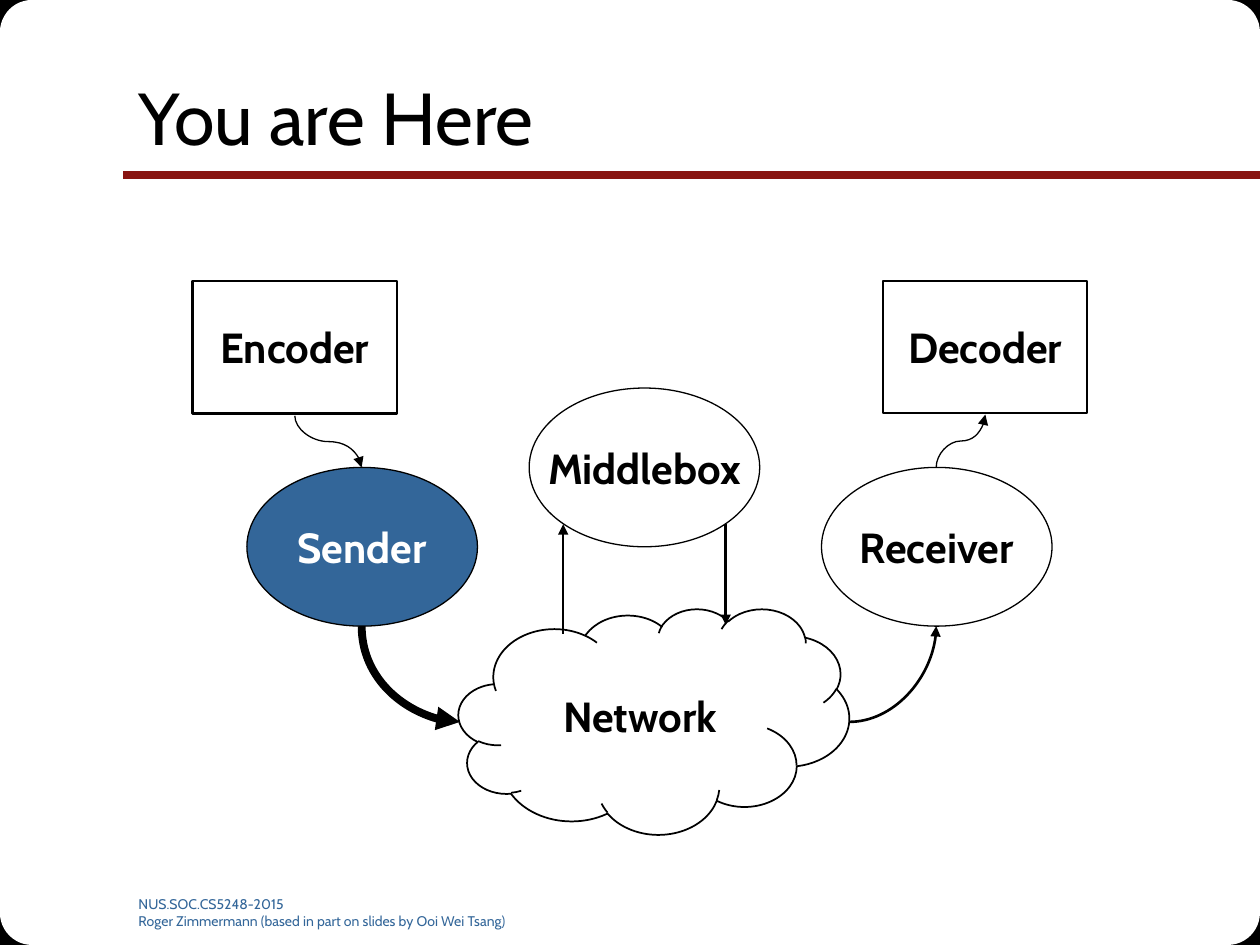
from pptx import Presentation, util as u
from pptx.dml.color import RGBColor
from pptx.enum import shapes as s, text as t
from pptx.oxml.ns import qn
from lxml import etree

COLS, ROWS = 100, 75  # grid of cells a tenth of an inch wide
CELL = u.Inches(0.1)
FONT = "Cabin"
HUES = {"ink": "000000", "paper": "FFFFFF", "blue": "336699", "red": "891411"}
KIND = s.MSO_SHAPE
LINK = s.MSO_CONNECTOR


def grid(*cells):
    return [round(c * CELL) for c in cells]


def hue(name):
    return RGBColor.from_string(HUES[name])


def write(frame, words, size=24, color="ink", bold=False,
          align=t.PP_ALIGN.LEFT, anchor=t.MSO_ANCHOR.MIDDLE, wrap=True):
    frame.auto_size = t.MSO_AUTO_SIZE.NONE
    frame.word_wrap = wrap
    frame.vertical_anchor = anchor
    frame.text = words
    for para in frame.paragraphs:
        para.alignment = align
        for run in para.runs:
            font = run.font
            font.name, font.size, font.bold = FONT, u.Pt(size), bold
            font.color.rgb = hue(color)


def block(slide, kind, box, fill="paper", line=None):
    """Add a filled preset shape; line is its outline width in points."""
    shape = slide.shapes.add_shape(kind, *grid(*box))
    shape.shadow.inherit = False
    shape.fill.solid()
    shape.fill.fore_color.rgb = hue(fill)
    if line:
        shape.line.color.rgb = hue("ink")
        shape.line.width = u.Pt(line)
    else:
        shape.line.fill.background()
    return shape


def node(slide, words, kind, box, fill="paper", color="ink", line=0.75):
    shape = block(slide, kind, box, fill, line)
    write(shape.text_frame, words, color=color, bold=True,
          align=t.PP_ALIGN.CENTER, wrap=False)


def link(slide, start, end, width, color="ink", kind=LINK.STRAIGHT, head=True):
    con = slide.shapes.add_connector(kind, *grid(*start, *end))
    con.line.color.rgb = hue(color)
    con.line.width = u.Pt(width)
    if head:
        etree.SubElement(con.line._get_or_add_ln(), qn("a:tailEnd"),
                         type="triangle")
    etree.SubElement(con._element.spPr, qn("a:effectLst"))
    return con


def curve(slide, start, end, width, upright=True, bend=3):
    """Curved arrow; upright ones leave vertically, by a turn of 270 degrees."""
    if upright:
        (x1, y1), (x2, y2) = start, end
        mx, my = (x1 + x2) / 2, (y1 + y2) / 2
        dx, dy = (x2 - x1) / 2, (y2 - y1) / 2
        start, end = (mx + dy, my - dx), (mx - dy, my + dx)
    con = link(slide, start, end, width, kind=LINK.CURVE)
    props = con._element.spPr
    props.find(qn("a:prstGeom")).set("prst", f"curvedConnector{bend}")
    if upright:
        props.find(qn("a:xfrm")).set("rot", str(270 * 60000))


def frame(slide):
    """Black page corners, rounded off in white, and the rule."""
    for kind, w, h, fill in ((KIND.RECTANGLE, 4.3, 4.4, "ink"),
                             (KIND.ROUNDED_RECTANGLE, 15.3, 15.3, "paper")):
        for x in (0, COLS - w):
            for y in (0, ROWS - h):
                block(slide, kind, (x, y, w, h), fill)
    link(slide, (COLS, 13.9), (9.8, 13.9), 4.5, "red", head=False)


def heads(slide):
    title = slide.shapes.title
    slide.shapes._spTree.append(title._element)  # above the page corners
    title.left, title.top, title.width, title.height = grid(10, 3, 85, 12.5)
    write(title.text_frame, "You are Here", size=42)
    foot = slide.shapes.add_textbox(*grid(10, 70.6, 35.8, 2.8))
    write(foot.text_frame, "NUS.SOC.CS5248-2015\nRoger Zimmermann "
          "(based in part on slides by Ooi Wei Tsang)",
          size=8, color="blue", anchor=t.MSO_ANCHOR.TOP)


def flow(slide):
    oval = (18.3, 12.6)
    card = (16.2, 10.5)
    node(slide, "Network", KIND.CLOUD, (36.4, 48.3, 31, 17.9), line=1)
    node(slide, "Encoder", KIND.RECTANGLE, (15.3, 22.3, *card), line=1.5)
    node(slide, "Decoder", KIND.RECTANGLE, (70.1, 22.3, *card), line=1)
    node(slide, "Sender", KIND.OVAL, (19.6, 37.1, *oval), "blue", "paper")
    node(slide, "Middlebox", KIND.OVAL, (42, 30.8, *oval))
    node(slide, "Receiver", KIND.OVAL, (65.2, 37.1, *oval))

    curve(slide, (23.4, 33), (28.7, 37.1), 0.75)
    curve(slide, (28.7, 49.7), (36.5, 57.3), 4.5, bend=2)
    link(slide, (44.7, 50.3), (44.7, 41.6), 1.5)
    link(slide, (57.6, 41.6), (57.6, 49.6), 1.5)
    curve(slide, (67.4, 57.3), (74.3, 49.7), 1.5, upright=False, bend=2)
    curve(slide, (74.3, 37.1), (78.2, 32.9), 0.75)


def main():
    deck = Presentation()
    deck.slide_width, deck.slide_height = grid(COLS, ROWS)
    slide = deck.slides.add_slide(deck.slide_layouts[5])
    frame(slide)
    heads(slide)
    flow(slide)
    deck.save("out.pptx")


if __name__ == "__main__":
    main()
